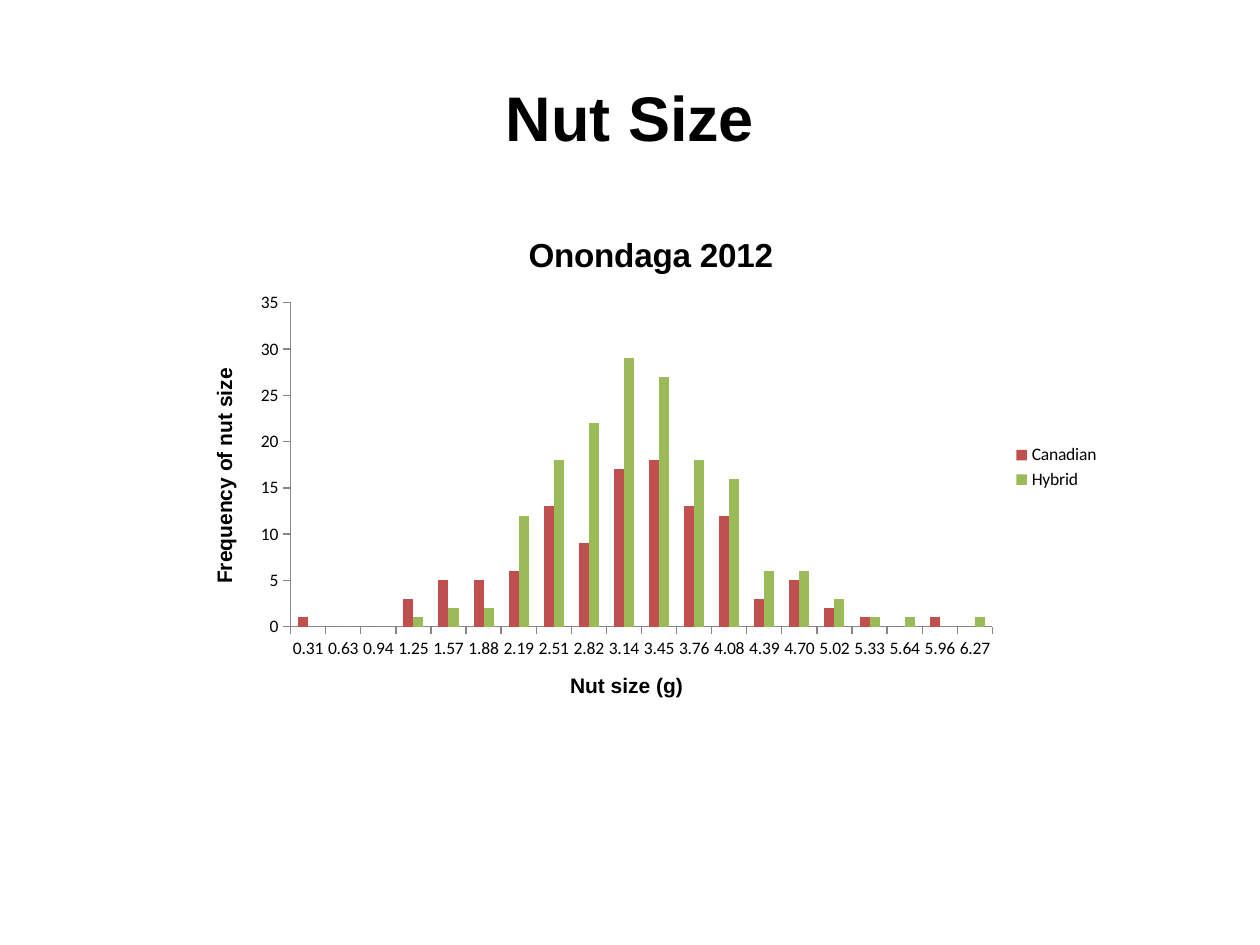
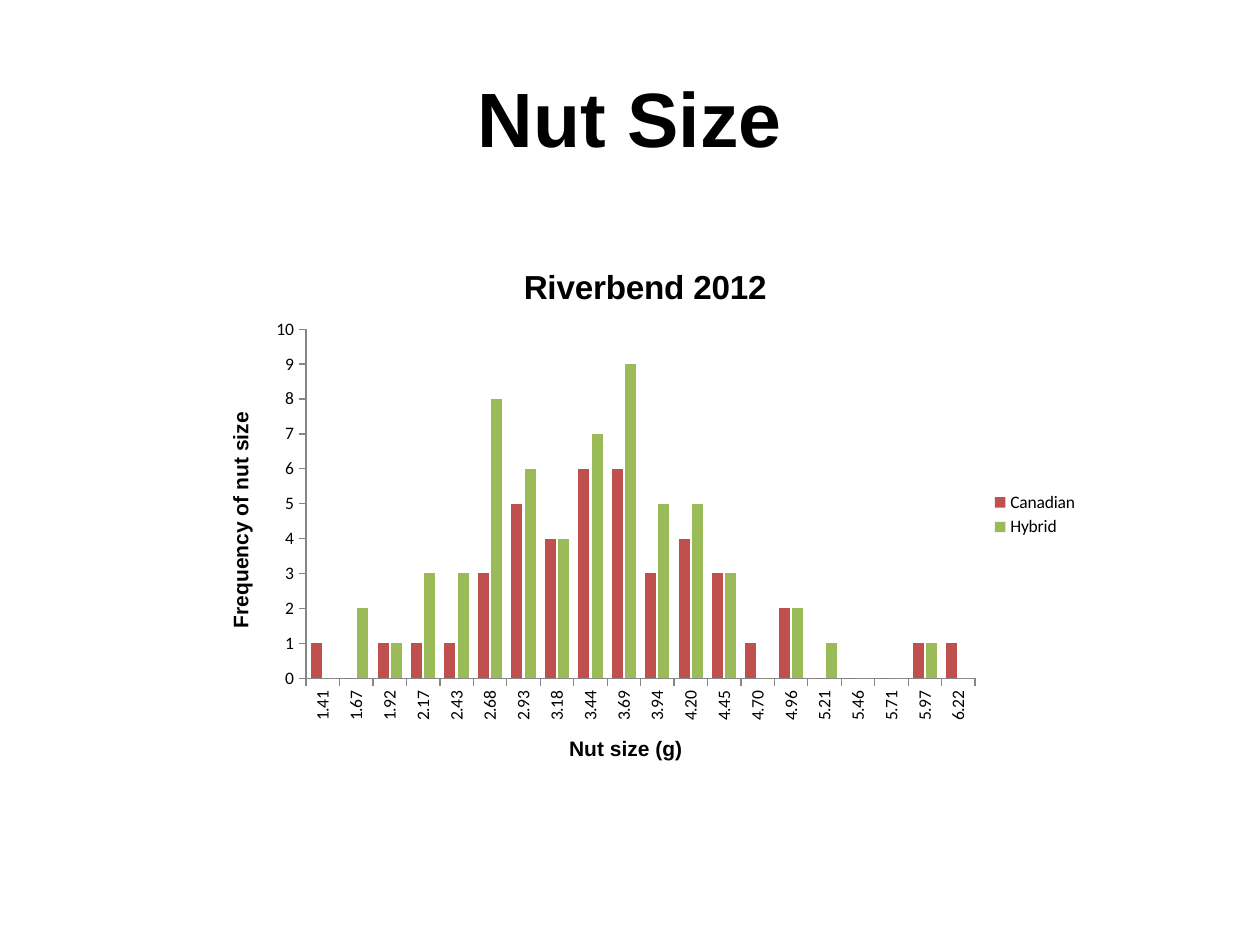
import pptx
import pptx.chart.data
import pptx.dml.color
import pptx.enum.chart
import pptx.oxml
import pptx.oxml.ns
import pptx.util

BLACK = pptx.dml.color.RGBColor(0x00, 0x00, 0x00)
AXIS_GREY = pptx.dml.color.RGBColor(0x86, 0x86, 0x86)
CANADIAN_RED = pptx.dml.color.RGBColor(0xC0, 0x50, 0x4D)
HYBRID_GREEN = pptx.dml.color.RGBColor(0x9B, 0xBB, 0x59)

HEADING_FONT = "Arial"
LABEL_FONT = "Calibri"
SLIDE_WIDTH = pptx.util.Inches(10)
SLIDE_HEIGHT = pptx.util.Inches(7.5)

HEADING = "Nut Size"
SIZE_AXIS = "Nut size (g)"
FREQUENCY_AXIS = "Frequency of nut size"
NUT_COLOURS = {"Canadian": CANADIAN_RED, "Hybrid": HYBRID_GREEN}

SITES = [
    {
        "site": "Onondaga 2012",
        "heading_size": 36,
        "frame": (1.5, 1.67, 7.33, 4.08),
        "plot": {"x": 0.11, "y": 0.18, "w": 0.76, "h": 0.63},
        "gap": 150, "overlap": 0, "label_turn": 0, "top": 35, "step": 5,
        "sizes": ["0.31", "0.63", "0.94", "1.25", "1.57", "1.88", "2.19",
                  "2.51", "2.82", "3.14", "3.45", "3.76", "4.08", "4.39",
                  "4.70", "5.02", "5.33", "5.64", "5.96", "6.27"],
        "Canadian": [1, 0, 0, 3, 5, 5, 6, 13, 9, 17,
                     18, 13, 12, 3, 5, 2, 1, 0, 1, 0],
        "Hybrid": [0, 0, 0, 1, 2, 2, 12, 18, 22, 29,
                   27, 18, 16, 6, 6, 3, 1, 1, 0, 1],
    },
    {
        "site": "Riverbend 2012",
        "heading_size": 44,
        "frame": (1.58, 1.92, 7.08, 4.33),
        "plot": {"x": 0.12, "y": 0.16, "w": 0.75, "h": 0.64},
        "gap": 83, "overlap": -22, "label_turn": -90, "top": 10, "step": 1,
        "sizes": ["1.41", "1.67", "1.92", "2.17", "2.43", "2.68", "2.93",
                  "3.18", "3.44", "3.69", "3.94", "4.20", "4.45", "4.70",
                  "4.96", "5.21", "5.46", "5.71", "5.97", "6.22"],
        "Canadian": [1, 0, 1, 1, 1, 3, 5, 4, 6, 6,
                     3, 4, 3, 1, 2, 0, 0, 0, 1, 1],
        "Hybrid": [0, 2, 1, 3, 3, 8, 6, 4, 7, 9,
                   5, 5, 3, 0, 2, 1, 0, 0, 1, 0],
    },
]


def style_font(font, face, size, bold=False):
    font.name = face
    font.size = pptx.util.Pt(size)
    font.bold = bold
    font.color.rgb = BLACK


def write_heading(text_frame, text, size):
    run = text_frame.paragraphs[0].add_run()
    run.text = text
    style_font(run.font, HEADING_FONT, size, bold=True)


def style_axis(axis, title):
    write_heading(axis.axis_title.text_frame, title, 12)
    axis.has_major_gridlines = False
    axis.major_tick_mark = pptx.enum.chart.XL_TICK_MARK.OUTSIDE
    axis.minor_tick_mark = pptx.enum.chart.XL_TICK_MARK.NONE
    axis.format.line.color.rgb = AXIS_GREY
    axis.format.line.width = pptx.util.Pt(0.75)
    style_font(axis.tick_labels.font, LABEL_FONT, 10)


def place_plot(chart, shares):
    plot_area = chart._chartSpace.chart.plotArea
    for automatic in plot_area.findall(pptx.oxml.ns.qn("c:layout")):
        plot_area.remove(automatic)
    places = "".join(f'<c:{side} val="{share}"/>' for side, share in shares.items())
    plot_area.insert(0, pptx.oxml.parse_xml(
        f'<c:layout {pptx.oxml.ns.nsdecls("c")}><c:manualLayout>'
        '<c:layoutTarget val="inner"/><c:xMode val="edge"/><c:yMode val="edge"/>'
        f'{places}</c:manualLayout></c:layout>'))


def add_histogram(slide, site):
    counts = pptx.chart.data.CategoryChartData()
    counts.categories = site["sizes"]
    for nut in NUT_COLOURS:
        counts.add_series(nut, site[nut])
    chart = slide.shapes.add_chart(
        pptx.enum.chart.XL_CHART_TYPE.COLUMN_CLUSTERED,
        *map(pptx.util.Inches, site["frame"]), counts).chart
    style_font(chart.font, LABEL_FONT, 10)

    chart.has_title = True
    write_heading(chart.chart_title.text_frame, site["site"], 19)
    chart.has_legend = True
    chart.legend.position = pptx.enum.chart.XL_LEGEND_POSITION.RIGHT
    chart.legend.include_in_layout = False
    style_font(chart.legend.font, LABEL_FONT, 10)

    style_axis(chart.category_axis, SIZE_AXIS)
    style_axis(chart.value_axis, FREQUENCY_AXIS)
    chart.value_axis.minimum_scale = 0
    chart.value_axis.maximum_scale = site["top"]
    chart.value_axis.major_unit = site["step"]
    label_body = chart.category_axis._element.txPr.find(pptx.oxml.ns.qn("a:bodyPr"))
    label_body.set("rot", str(site["label_turn"] * 60000))
    label_body.set("vert", "horz")

    bars = chart.plots[0]
    bars.vary_by_categories = False
    bars.gap_width = site["gap"]
    bars.overlap = site["overlap"]
    for series in bars.series:
        series.format.fill.solid()
        series.format.fill.fore_color.rgb = NUT_COLOURS[series.name]
    place_plot(chart, site["plot"])


def main():
    deck = pptx.Presentation()
    deck.slide_width = SLIDE_WIDTH
    deck.slide_height = SLIDE_HEIGHT
    for site in SITES:
        slide = deck.slides.add_slide(deck.slide_layouts[5])
        write_heading(slide.shapes.title.text_frame, HEADING, site["heading_size"])
        add_histogram(slide, site)
    deck.save("out.pptx")


if __name__ == "__main__":
    main()
